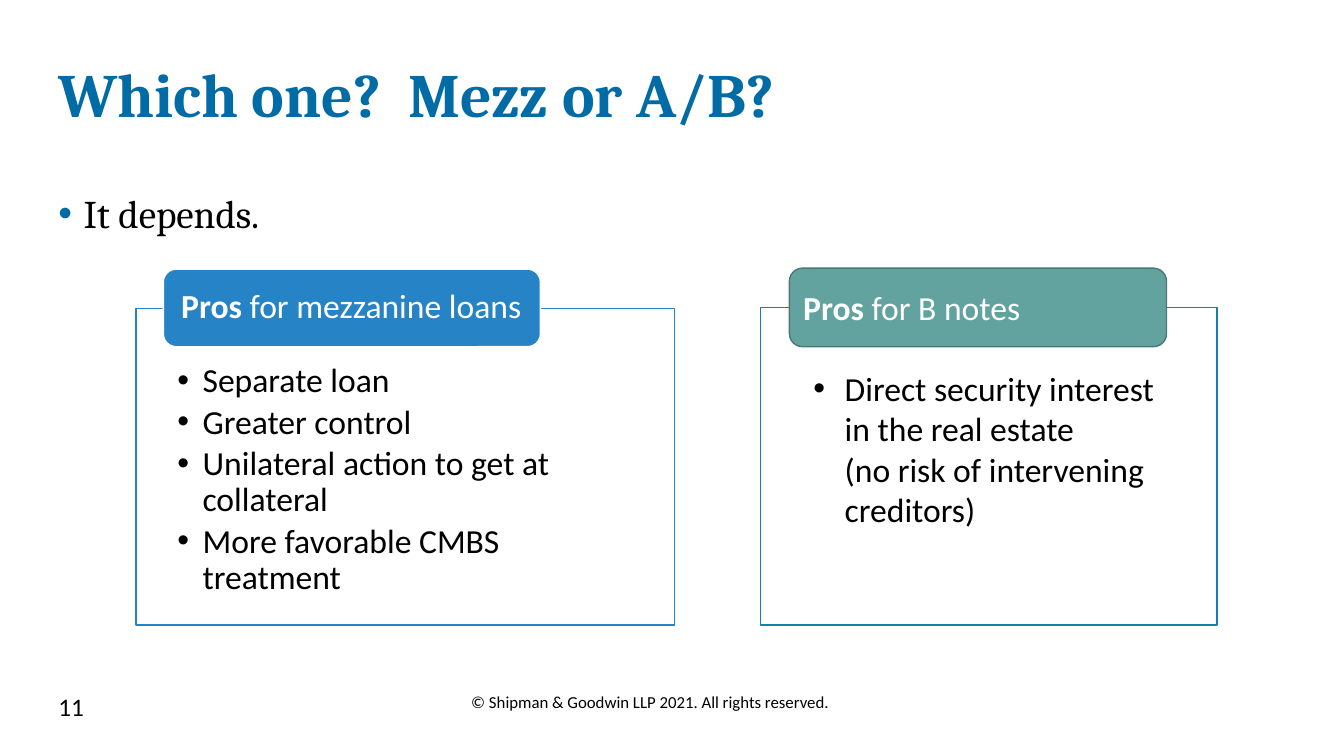
"""Build the slide weighing mezzanine loans against B notes."""
from lxml import etree
from pptx import Presentation
from pptx.dml.color import RGBColor
from pptx.enum import shapes, text
from pptx.oxml import ns
from pptx.util import Inches, Pt

COLORS = {"title": "006BA4", "text": "000000", "white": "FFFFFF",
          "mezz": "2683C6", "b_box": "1580A9", "b_head": "62A39F", "b_edge": "497976"}


def style(p, size, font="Calibri", color="text", spacing=1.0, after=0, indent=0, bullet=None):
    """Format a paragraph and its runs, with a bullet when a colour is given."""
    if bullet:
        pPr = p._p.get_or_add_pPr()
        pPr.set("marL", str(Inches(indent)))
        pPr.set("indent", str(-Inches(indent)))
        clr = etree.SubElement(pPr, ns.qn("a:buClr"))
        etree.SubElement(clr, ns.qn("a:srgbClr"), val=COLORS[bullet])
        etree.SubElement(pPr, ns.qn("a:buFont"), typeface="Arial")
        etree.SubElement(pPr, ns.qn("a:buChar"), char="•")
    p.line_spacing = spacing
    p.space_before = Pt(0)
    p.space_after = Pt(after)
    for r in p.runs:
        r.font.name = font
        r.font.size = Pt(size)
        r.font.color.rgb = RGBColor.from_string(COLORS[color])


def add_box(s, kind, at, fill, line):
    """Add a filled, outlined shape with left-aligned text."""
    sp = s.shapes.add_shape(kind, *map(Inches, at))
    sp.shadow.inherit = False
    sp.fill.solid()
    sp.fill.fore_color.rgb = RGBColor.from_string(COLORS[fill])
    sp.line.color.rgb = RGBColor.from_string(COLORS[line])
    sp.line.width = Pt(1)
    sp.text_frame.word_wrap = True
    sp.text_frame.paragraphs[0].alignment = text.PP_ALIGN.LEFT
    return sp


prs = Presentation()
prs.slide_width, prs.slide_height = Inches(13.33), Inches(7.5)
s = prs.slides.add_slide(prs.slide_layouts[1])

title, body = s.placeholders
for sp, top, height, words in [(title, 0.2, 1.54, "Which one?  Mezz or A/B?"),
                               (body, 1.88, 4.88, "It depends.")]:
    sp.left, sp.top, sp.width, sp.height = map(Inches, (0.48, top, 12.42, height))
    sp.text_frame.text = words
    sp.text_frame.auto_size = text.MSO_AUTO_SIZE.NONE
    sp.text_frame.paragraphs[0].alignment = text.PP_ALIGN.LEFT
title.text_frame.vertical_anchor = text.MSO_ANCHOR.MIDDLE
p = title.text_frame.paragraphs[0]
style(p, 44, "Cambria", "title", 0.9)
p.runs[0].font.bold = True
style(body.text_frame.paragraphs[0], 28, "Cambria", spacing=0.9, indent=0.25, bullet="title")

for left, width, words, size, align in [
        (4.2, 4.5, "© Shipman & Goodwin LLP 2021. All rights reserved.", 12, text.PP_ALIGN.CENTER),
        (0.48, 3, "11", 18, text.PP_ALIGN.LEFT)]:
    tf = s.shapes.add_textbox(Inches(left), Inches(6.81), Inches(width), Inches(0.4)).text_frame
    tf.word_wrap = True
    tf.text = words
    tf.paragraphs[0].alignment = align
    style(tf.paragraphs[0], size)

RECT, ROUND = shapes.MSO_SHAPE.RECTANGLE, shapes.MSO_SHAPE.ROUNDED_RECTANGLE
mezz_box = add_box(s, RECT, (1.35, 3.06, 5.34, 3.14), "white", "mezz")
b_box = add_box(s, RECT, (7.54, 3.05, 4.53, 3.15), "white", "b_box")

tf = mezz_box.text_frame
tf.vertical_anchor = text.MSO_ANCHOR.TOP
tf.margin_left = tf.margin_right = Inches(0.41)
tf.margin_top, tf.margin_bottom = Inches(0.55), Inches(0.19)
tf.text = "\n".join(["Separate loan", "Greater control",
                     "Unilateral action to get at collateral",
                     "More favorable CMBS treatment"])
for p in tf.paragraphs:
    p.alignment = text.PP_ALIGN.LEFT
    style(p, 24, spacing=0.9, after=3.6, indent=0.25, bullet="text")

tf = s.shapes.add_textbox(Inches(7.97), Inches(3.6), Inches(3.6), Inches(1.72)).text_frame
tf.word_wrap = True
tf.auto_size = text.MSO_AUTO_SIZE.SHAPE_TO_FIT_TEXT
p = tf.paragraphs[0]
p.text = "Direct security interest in the real estate \v(no risk of intervening creditors)"
style(p, 24, indent=0.31, bullet="text")

for at, fill, line, inset, spacing, subject in [
        ((1.62, 2.67, 3.74, 0.77), "mezz", "white", 0.14, 0.9, " for mezzanine loans"),
        ((7.83, 2.66, 3.74, 0.78), "b_head", "b_edge", 0.1, 1.0, " for B notes")]:
    tf = add_box(s, ROUND, at, fill, line).text_frame
    tf.vertical_anchor = text.MSO_ANCHOR.MIDDLE
    tf.margin_left, tf.margin_right = Inches(inset), Inches(0.1)
    p = tf.paragraphs[0]
    for words, bold in [("Pros", True), (subject, False)]:
        r = p.add_run()
        r.text = words
        r.font.bold = bold
    style(p, 24, color="white", spacing=spacing)

prs.save("out.pptx")
